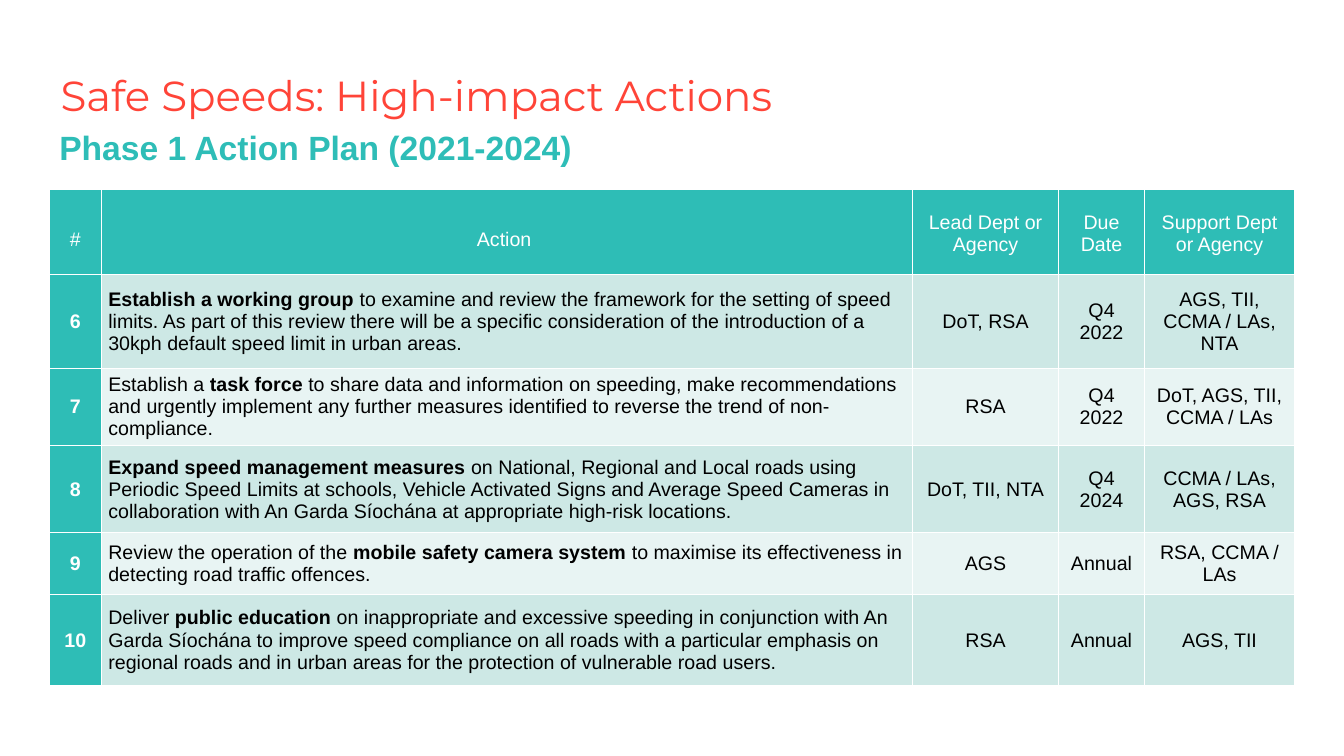
from dataclasses import dataclass

import pptx
import pptx.dml.color
import pptx.enum.text
import pptx.oxml
import pptx.oxml.ns
import pptx.slide
import pptx.table
import pptx.text.text
import pptx.util

ALIGN = pptx.enum.text.PP_ALIGN
ANCHOR = pptx.enum.text.MSO_ANCHOR
SLIDE_WIDTH = pptx.util.Inches(13.33)
SLIDE_HEIGHT = pptx.util.Inches(7.5)


@dataclass(frozen=True)
class Theme:
    title_color: str = "FF4438"
    subtitle_color: str = "2EBDB7"
    header_fill: str = "2EBDB6"
    band_fills: tuple[str, str] = ("CDE8E5", "E8F4F3")
    light: str = "FFFFFF"
    dark: str = "000000"
    title_font: str = "Montserrat"
    body_font: str = "Arial"
    title_size: int = 30
    subtitle_size: int = 24
    table_size: int = 14


@dataclass(frozen=True)
class Column:
    heading: str
    width: float  # percent of the slide width
    heading_inset: float  # percent of the slide height
    align: ALIGN = ALIGN.CENTER


@dataclass(frozen=True)
class Action:
    height: float  # percent of the slide height
    number: str
    action: str  # **double asterisks** enclose bold words
    lead: str
    due: str
    support: str


THEME = Theme()
LEFT = 3.68
TABLE_TOP = 25.1
HEADER_HEIGHT = 11.23

COLUMNS = (
    Column("#", 3.86, 5.2),
    Column("Action ", 60.36, 5.2, ALIGN.LEFT),
    Column("Lead Dept or Agency", 10.88, 2.93),
    Column("Due Date", 6.38, 2.93),
    Column("Support Dept or Agency", 11.18, 2.93),
)

ACTIONS = (
    Action(12.43, "6",
           "**Establish a working group** to examine and review the framework for the "
           "setting of speed limits. As part of this review there will be a specific "
           "consideration of the introduction of a 30kph default speed limit in urban areas.",
           "DoT, RSA", "Q4 2022", "AGS, TII, CCMA / LAs, NTA"),
    Action(10.2, "7",
           "Establish a **task force** to share data and information on speeding, make "
           "recommendations and urgently implement any further measures identified to "
           "reverse the trend of non-compliance.",
           "RSA", "Q4 2022", "DoT, AGS, TII, CCMA / LAs"),
    Action(11.53, "8",
           "**Expand speed management measures** on National, Regional and Local roads "
           "using Periodic Speed Limits at schools, Vehicle Activated Signs and Average "
           "Speed Cameras in collaboration with An Garda Síochána at appropriate "
           "high-risk locations.",
           "DoT, TII, NTA", "Q4 2024", "CCMA / LAs, AGS, RSA"),
    Action(8.2, "9",
           "Review the operation of the **mobile safety camera system** to maximise its "
           "effectiveness in detecting road traffic offences.",
           "AGS", "Annual", "RSA, CCMA / LAs"),
    Action(12, "10",
           "Deliver **public education** on inappropriate and excessive speeding in "
           "conjunction with An Garda Síochána to improve speed compliance on all roads "
           "with a particular emphasis on regional roads and in urban areas for the "
           "protection of vulnerable road users.",
           "RSA", "Annual", "AGS, TII"),
)


def across(percent: float) -> int:
    return round(SLIDE_WIDTH * percent / 100)


def down(percent: float) -> int:
    return round(SLIDE_HEIGHT * percent / 100)


def write_text(frame: pptx.text.text.TextFrame, text: str, *, size: int, color: str,
               font: str = THEME.body_font, bold: bool = False,
               align: ALIGN = ALIGN.LEFT, line_spacing: float = 1.0) -> None:
    """Fill the frame with one paragraph; **marked** words are set in bold."""
    frame.word_wrap = True
    paragraph = frame.paragraphs[0]
    paragraph.alignment = align
    paragraph.line_spacing = line_spacing
    paragraph.space_before = pptx.util.Pt(0)
    for index, part in enumerate(text.split("**")):
        if part:
            run = paragraph.add_run()
            run.text = part
            run.font.name = font
            run.font.size = pptx.util.Pt(size)
            run.font.bold = bold or index % 2 == 1
            run.font.color.rgb = pptx.dml.color.RGBColor.from_string(color)


def format_cell(cell: pptx.table._Cell, fill: str, anchor: ANCHOR, top_inset: float = 0) -> None:
    properties = cell._tc.get_or_add_tcPr()
    for side in "LRTB":
        properties.append(pptx.oxml.parse_xml(
            f'<a:ln{side} {pptx.oxml.ns.nsdecls("a")} w="{pptx.util.Pt(1)}"><a:solidFill>'
            f'<a:srgbClr val="{THEME.light}"/></a:solidFill></a:ln{side}>'))
    cell.fill.solid()
    cell.fill.fore_color.rgb = pptx.dml.color.RGBColor.from_string(fill)
    cell.vertical_anchor = anchor
    cell.margin_left = cell.margin_right = pptx.util.Inches(0.07)
    cell.margin_top = down(top_inset)
    cell.margin_bottom = 0


def add_headings(slide: pptx.slide.Slide) -> None:
    title = slide.shapes.title
    title.left, title.top = across(LEFT), down(2)
    title.width, title.height = across(64.44), down(14.67)
    title.fill.solid()
    title.fill.fore_color.rgb = pptx.dml.color.RGBColor.from_string(THEME.light)
    title.text_frame.vertical_anchor = ANCHOR.BOTTOM
    title.text_frame.auto_size = pptx.enum.text.MSO_AUTO_SIZE.NONE
    title.text_frame.margin_left = pptx.util.Inches(0.11)
    write_text(title.text_frame, "Safe Speeds: High-impact Actions", size=THEME.title_size,
               color=THEME.title_color, font=THEME.title_font, line_spacing=0.9)
    subtitle = slide.shapes.add_textbox(across(LEFT), down(16.67), across(82.45), down(5.2))
    write_text(subtitle.text_frame, "Phase 1 Action Plan (2021-2024)",
               size=THEME.subtitle_size, color=THEME.subtitle_color, bold=True,
               line_spacing=0.9)


def add_action_table(slide: pptx.slide.Slide) -> None:
    heights = [HEADER_HEIGHT, *(action.height for action in ACTIONS)]
    table = slide.shapes.add_table(
        len(heights), len(COLUMNS), across(LEFT), down(TABLE_TOP),
        across(sum(column.width for column in COLUMNS)), down(sum(heights))).table
    table.first_row = table.horz_banding = False
    for row, height in zip(table.rows, heights):
        row.height = down(height)

    for column_index, column in enumerate(COLUMNS):
        table.columns[column_index].width = across(column.width)
        heading = table.cell(0, column_index)
        format_cell(heading, THEME.header_fill, ANCHOR.TOP, column.heading_inset)
        write_text(heading.text_frame, column.heading, size=THEME.table_size,
                   color=THEME.light, align=ALIGN.CENTER)

    for row_index, action in enumerate(ACTIONS):
        values = (action.number, action.action, action.lead, action.due, action.support)
        for column_index, (column, value) in enumerate(zip(COLUMNS, values)):
            is_number = column_index == 0
            cell = table.cell(row_index + 1, column_index)
            fill = THEME.header_fill if is_number else THEME.band_fills[row_index % 2]
            format_cell(cell, fill, ANCHOR.MIDDLE)
            write_text(cell.text_frame, value, size=THEME.table_size, bold=is_number,
                       color=THEME.light if is_number else THEME.dark, align=column.align)


def main() -> None:
    presentation = pptx.Presentation()
    presentation.slide_width = SLIDE_WIDTH
    presentation.slide_height = SLIDE_HEIGHT
    slide = presentation.slides.add_slide(presentation.slide_layouts.get_by_name("Title Only"))
    add_headings(slide)
    add_action_table(slide)
    presentation.save("out.pptx")


if __name__ == "__main__":
    main()
